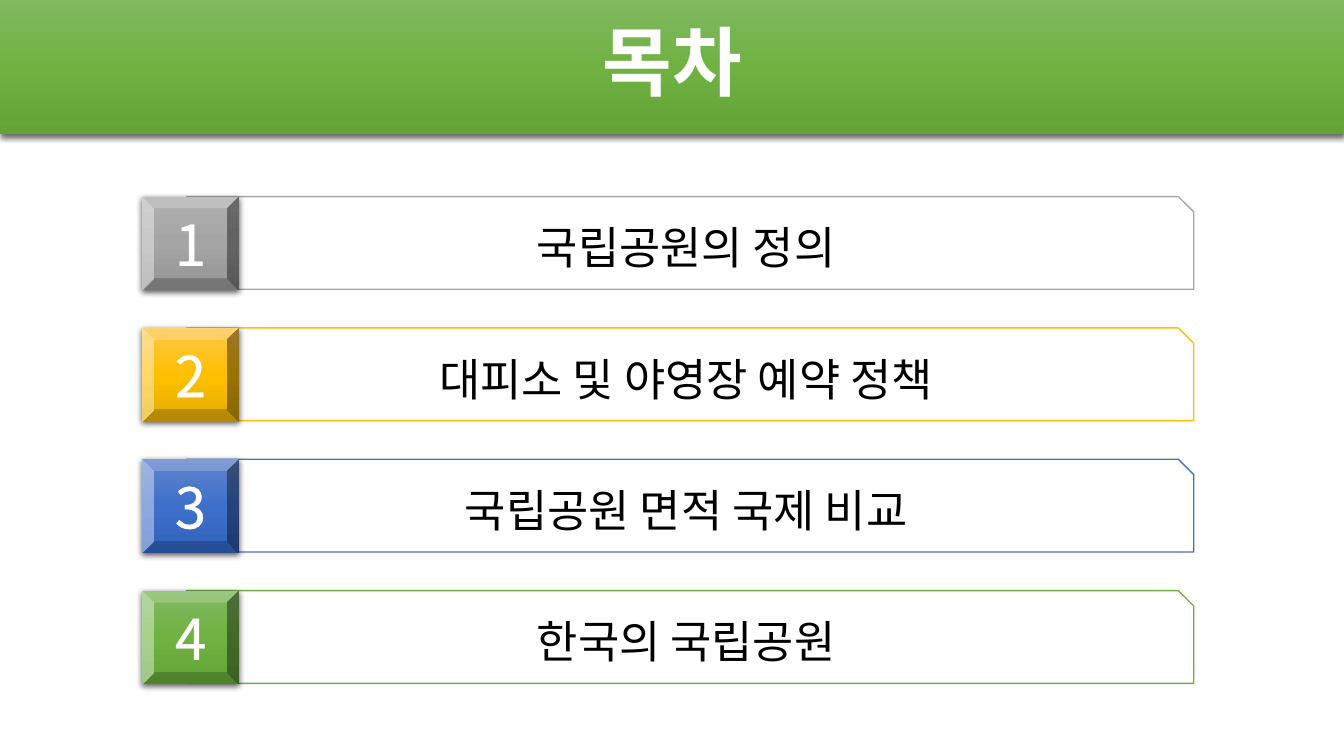
from lxml import etree
from pptx import Presentation, oxml, util as u
from pptx.dml.color import RGBColor
from pptx.enum import shapes, text
from pptx.oxml.ns import nsdecls, qn

FONT = "Noto Sans CJK KR"
COLORS = {"white": "FFFFFF", "black": "000000", "gray": "A5A5A5",
          "gold": "FFC000", "blue": "4472C4", "green": "70AD47"}
GRADIENTS = {"gray": ("AFAFAF", "A5A5A5", "939393"),
             "gold": ("FFC64B", "FFC000", "E3AB00"),
             "blue": ("6183CB", "3E70CA", "3062BB"),
             "green": ("81B861", "6FB242", "62A336")}
ITEMS = [("국립공원의 정의", "gray"),
         ("대피소 및 야영장 예약 정책", "gold"),
         ("국립공원 면적 국제 비교", "blue"),
         ("한국의 국립공원", "green")]


def write(sp, words, size, color="white", bold=False, outline=False, spacing=None):
    tf = sp.text_frame
    tf.word_wrap = True
    tf.vertical_anchor = text.MSO_ANCHOR.MIDDLE
    p = tf.paragraphs[0]
    p.alignment = text.PP_ALIGN.CENTER
    p.line_spacing = spacing
    r = p.add_run()
    r.text = words
    r.font.size = u.Pt(size)
    r.font.bold = bold
    r.font.color.rgb = RGBColor.from_string(COLORS[color])
    r.font.name = FONT
    rpr = r.font._element
    etree.SubElement(rpr, qn("a:ea")).set("typeface", FONT)
    if outline:
        rpr.insert(0, oxml.parse_xml(
            f'<a:ln {nsdecls("a")} w="{u.Pt(1.45)}"><a:solidFill>'
            f'<a:srgbClr val="{COLORS[color]}"/></a:solidFill></a:ln>'))


def add_glossy(kind, left, top, width, height, color):
    """Add a borderless shape with a vertical gradient and a soft drop shadow."""
    sp = s.shapes.add_shape(kind, *map(u.Inches, (left, top, width, height)))
    sp.line.fill.background()
    sp.shadow.inherit = False
    stops = "".join(f'<a:gs pos="{i * 50000}"><a:srgbClr val="{c}"/></a:gs>'
                    for i, c in enumerate(GRADIENTS[color]))
    props = sp._element.spPr
    props.find(qn("a:ln")).addprevious(oxml.parse_xml(
        f'<a:gradFill {nsdecls("a")} rotWithShape="1"><a:gsLst>{stops}</a:gsLst>'
        '<a:lin ang="5400000" scaled="0"/></a:gradFill>'))
    props.find(qn("a:effectLst")).append(oxml.parse_xml(
        f'<a:outerShdw {nsdecls("a")} blurRad="{u.Pt(4.5)}" dist="{u.Pt(1.5)}" '
        f'dir="5400000" algn="ctr" rotWithShape="0"><a:srgbClr val="{COLORS["black"]}">'
        '<a:alpha val="63000"/></a:srgbClr></a:outerShdw>'))
    return sp


prs = Presentation()
prs.slide_width, prs.slide_height = u.Inches(13.33), u.Inches(7.5)
s = prs.slides.add_slide(prs.slide_layouts[5])

# Title over the green band
add_glossy(shapes.MSO_SHAPE.RECTANGLE, 0, 0, 13.33, 1.33, "green")
title = s.shapes.title
title.left, title.top = u.Inches(0.92), u.Inches(-0.01)
title.width, title.height = u.Inches(11.5), u.Inches(1.33)
write(title, "목차", 54, bold=True, spacing=0.9)
s.shapes._spTree.append(title._element)

# Numbered entries
for i, (entry, color) in enumerate(ITEMS):
    top = 1.95 + i * 1.303
    bar = s.shapes.add_shape(shapes.MSO_SHAPE.SNIP_1_RECTANGLE, u.Inches(1.85),
                             u.Inches(top), u.Inches(9.99), u.Inches(0.92))
    bar.shadow.inherit = False
    bar.fill.solid()
    bar.fill.fore_color.rgb = RGBColor.from_string(COLORS["white"])
    bar.line.color.rgb = RGBColor.from_string(COLORS[color])
    bar.line.width = u.Pt(1)
    write(bar, entry, 32, "black")
    badge = add_glossy(shapes.MSO_SHAPE.BEVEL, 1.41, top, 0.96, 0.93, color)
    write(badge, str(i + 1), 40, outline=True)

prs.save("out.pptx")
